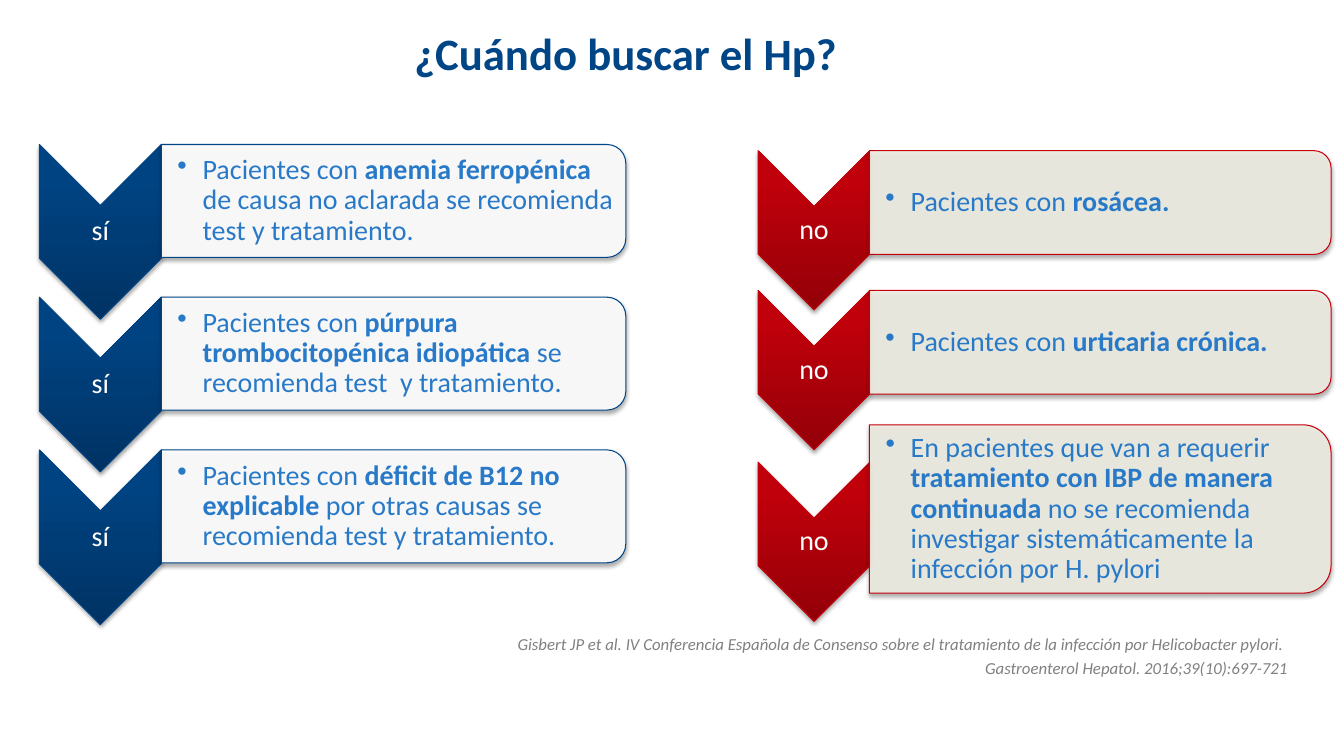
from lxml.etree import SubElement
from pptx import Presentation
from pptx.dml.color import RGBColor as RGB
from pptx.enum.shapes import MSO_SHAPE as SHAPE
from pptx.enum.text import MSO_ANCHOR as ANCHOR, PP_ALIGN as ALIGN
from pptx.oxml.ns import qn
from pptx.util import Inches, Pt

COLORS = {
    "title": "004586", "body": "287AC8", "label": "FFFFFF", "source": "808080",
    "yes_dark": "003364", "yes": "004382", "yes_line": "004586", "yes_card": "FFFFFF",
    "no_dark": "930008", "no": "C0000B", "no_line": "C5000B", "no_card": "EEECE1",
}
COLS, ROWS = 160, 90
WIDTH, HEIGHT = Inches(13.333), Inches(7.5)

YES_TOP, YES_PITCH, YES_CARD = 17.2, 18.18, 13.44
YES_ITEMS = [
    [("Pacientes con ", False), ("anemia ferropénica ", True),
     ("de causa no aclarada se recomienda test y tratamiento.", False)],
    [("Pacientes con ", False), ("púrpura trombocitopénica idiopática", True),
     (" se recomienda test  y tratamiento.", False)],
    [("Pacientes con ", False), ("déficit de B12 no explicable ", True),
     ("por otras causas se recomienda test y tratamiento.", False)],
]
NO_ITEMS = [
    (17.94, 17.94, 12.36, [("Pacientes con ", False), ("rosácea.", True)]),
    (34.58, 34.58, 12.36, [("Pacientes con ", False), ("urticaria crónica.", True)]),
    (55.02, 50.58, 20.04, [
        ("En pacientes que van a requerir ", False),
        ("tratamiento con IBP de manera continuada ", True),
        ("no se recomienda investigar sistemáticamente la infección por H. pylori", False)]),
]


def write(tf, paragraphs, size=20, color="body", align=ALIGN.LEFT, italic=False,
          bullet=False, line=None, before=0):
    """Fill a text frame with paragraphs made of (text, bold) runs."""
    for i, runs in enumerate(paragraphs):
        p = tf.add_paragraph() if i else tf.paragraphs[0]
        p.alignment = align
        if line:
            p.line_spacing = line
        if i and before:
            p.space_before = Pt(before)
        if bullet:
            pPr = p._p.get_or_add_pPr()
            pPr.set("marL", str(Inches(0.25)))
            pPr.set("indent", str(-Inches(0.25)))
            SubElement(pPr, qn("a:buChar"), char="•")
        for text, bold in runs:
            r = p.add_run()
            r.text = text
            r.font.name, r.font.size = "Calibri", Pt(size)
            r.font.bold, r.font.italic = bold, italic
            r.font.color.rgb = RGB.from_string(COLORS[color])


class Deck:
    """Draw styled elements on one slide, measured in grid columns and rows."""

    def __init__(self):
        """Open a presentation with one blank slide."""
        self.prs = Presentation()
        self.prs.slide_width, self.prs.slide_height = WIDTH, HEIGHT
        self.slide = self.prs.slides.add_slide(self.prs.slide_layouts[6])

    def box(self, x, y, w, h):
        """Turn grid units into slide lengths."""
        cw, rh = WIDTH / COLS, HEIGHT / ROWS
        return int(x * cw), int(y * rh), int(w * cw), int(h * rh)

    def text(self, x, y, w, h, paragraphs, anchor=ANCHOR.MIDDLE, left=0.01, pad=0.01, **fmt):
        """Add a wrapped text box."""
        tf = self.slide.shapes.add_textbox(*self.box(x, y, w, h)).text_frame
        tf.word_wrap, tf.vertical_anchor = True, anchor
        tf.margin_left = Inches(left)
        tf.margin_right = tf.margin_top = tf.margin_bottom = Inches(pad)
        write(tf, paragraphs, **fmt)

    def turned(self, kind, x, y, w, h, tone):
        """Add a shadowed shape turned a quarter so that it covers the given box."""
        turned_box = self.box(x + (w - h) / 2, y + (h - w) / 2, h, w)
        sp = self.slide.shapes.add_shape(kind, *turned_box)
        sp.rotation = 90
        sp.line.color.rgb = RGB.from_string(COLORS[tone + "_line"])
        sp.line.width = Pt(0.75)
        sp.shadow.inherit = False
        effects = sp._element.spPr.find(qn("a:effectLst"))
        shadow = SubElement(effects, qn("a:outerShdw"), blurRad=str(Pt(3.1)),
                            dist=str(Pt(1.8)), dir="5400000", rotWithShape="0")
        black = SubElement(shadow, qn("a:srgbClr"), val="000000")
        SubElement(black, qn("a:alpha"), val="35000")
        return sp

    def chevron(self, x, y, w, h, label, tone):
        """Add a downward chevron with its label."""
        sp = self.turned(SHAPE.CHEVRON, x, y, w, h, tone)
        sp.fill.gradient()
        sp.fill.gradient_angle = 90
        stops = zip(sp.fill.gradient_stops, (0, 0.8), (tone + "_dark", tone))
        for stop, position, color in stops:
            stop.position = position
            stop.color.rgb = RGB.from_string(COLORS[color])
        sp._element.spPr.find(qn("a:gradFill")).set("rotWithShape", "0")
        self.text(x, y + w / 2, w, h - w, [[(label, False)]],
                  color="label", align=ALIGN.CENTER, line=0.9)

    def card(self, x, y, w, h, runs, tone):
        """Add a card rounded on the right with one bullet."""
        sp = self.turned(SHAPE.ROUND_2_SAME_RECTANGLE, x, y, w, h, tone)
        sp.fill.solid()
        sp.fill.fore_color.rgb = RGB.from_string(COLORS[tone + "_card"])
        color = sp._element.spPr.find(qn("a:solidFill")).find(qn("a:srgbClr"))
        SubElement(color, qn("a:alpha"), val="90000")
        inset = h * 0.05
        self.text(x, y + inset, w - inset, h - 2 * inset, [runs],
                  left=0.16, bullet=True, line=0.9)


def main():
    """Build and save the slide."""
    deck = Deck()
    deck.text(2.5, 0.025 * ROWS, 0.9 * COLS, 0.09 * ROWS, [[("¿Cuándo buscar el Hp?", True)]],
              size=32, color="title", align=ALIGN.CENTER)
    for i, runs in enumerate(YES_ITEMS):
        y = YES_TOP + i * YES_PITCH
        deck.chevron(4.68, y, 14.52, 20.8, "sí", "yes")
        deck.card(19.2, y, 55.3, YES_CARD, runs, "yes")
    for chevron_y, card_y, card_h, runs in NO_ITEMS:
        deck.chevron(90.25, chevron_y, 13.32, 18.96, "no", "no")
        deck.card(103.5, card_y, 54.96, card_h, runs, "no")
    deck.text(2.5, 74.3, 152, 7.5, [
        [("Gisbert JP et al. IV Conferencia Española de Consenso sobre el tratamiento "
          "de la infección por Helicobacter pylori. ", False)],
        [("Gastroenterol Hepatol. 2016;39(10):697-721", False)],
    ], anchor=ANCHOR.TOP, left=0.1, pad=0.1, size=12, color="source",
        align=ALIGN.RIGHT, italic=True, before=2.4)
    deck.prs.save("out.pptx")


if __name__ == "__main__":
    main()
